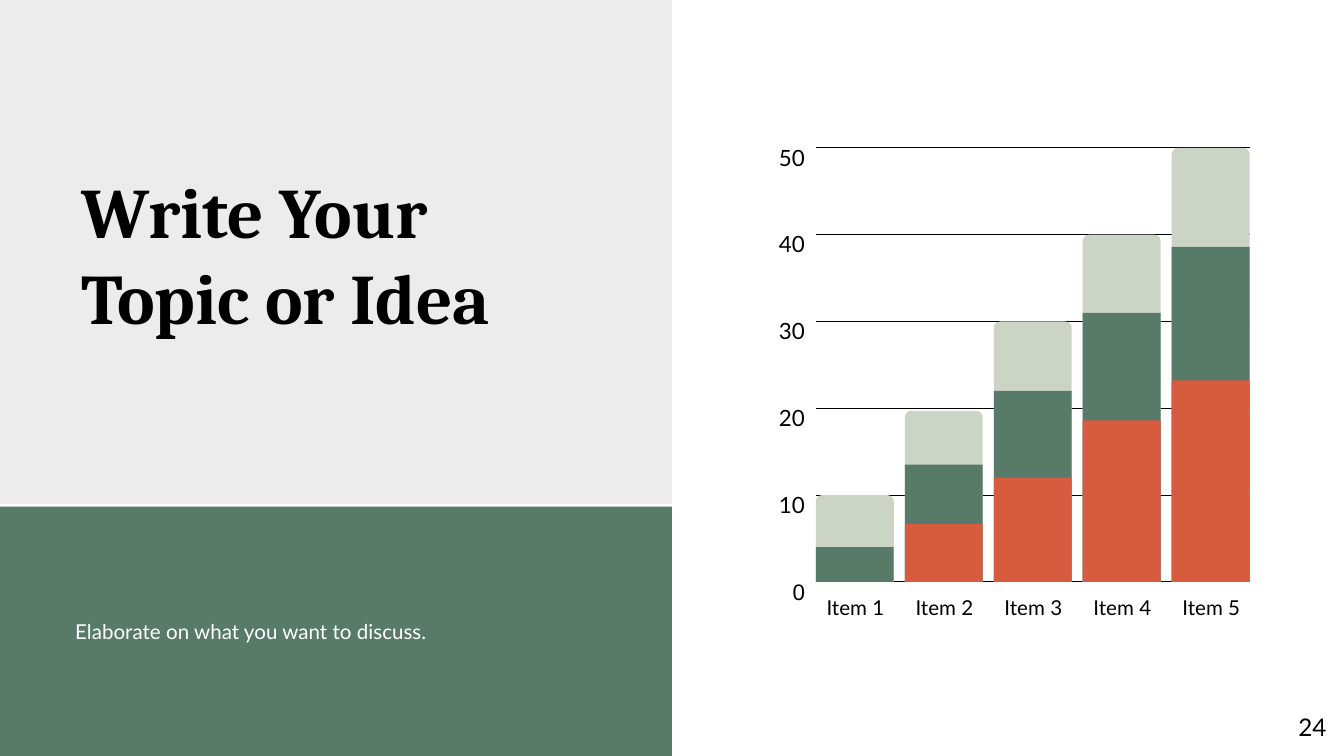
from lxml.etree import SubElement
from pptx import Presentation
from pptx.dml.color import RGBColor
from pptx.enum.shapes import MSO_CONNECTOR, MSO_SHAPE
from pptx.enum.text import MSO_ANCHOR, MSO_AUTO_SIZE, PP_ALIGN
from pptx.oxml.ns import qn
from pptx.util import Inches, Pt

BLACK = RGBColor(0x00, 0x00, 0x00)
WHITE = RGBColor(0xFF, 0xFF, 0xFF)
GREY = RGBColor(0xED, 0xEC, 0xED)
SAGE = RGBColor(0xCB, 0xD4, 0xC5)
GREEN = RGBColor(0x58, 0x7B, 0x69)
ORANGE = RGBColor(0xD7, 0x5B, 0x3F)

# Slide grid: square cells, 100 columns by 56.25 rows
COLUMNS, ROWS = 100, 56.25
CELL = Inches(10) / COLUMNS

# Chart geometry in grid cells
CHART_LEFT, CHART_RIGHT, BASELINE = 60.7, 93, 43.3
ROWS_PER_UNIT = 0.646
BAR_WIDTH, BAR_STEP = 5.8, 6.62

# Item: heights reached by the sage, green and orange parts
ITEMS = {
    "Item 1": (10, 4, 0),
    "Item 2": (19.7, 13.5, 6.7),
    "Item 3": (30, 22, 12),
    "Item 4": (40, 31, 18.6),
    "Item 5": (50, 38.6, 23.2),
}


def cells(*lengths):
    return [round(length * CELL) for length in lengths]


def write_text(shape, text, size=11, font="Lato", color=BLACK, bold=False,
               align=PP_ALIGN.LEFT, spacing=1.0, anchor=MSO_ANCHOR.TOP):
    frame = shape.text_frame
    frame.word_wrap = True
    frame.auto_size = MSO_AUTO_SIZE.NONE
    frame.vertical_anchor = anchor
    frame.margin_left = frame.margin_right = 0
    frame.margin_top = frame.margin_bottom = 0
    frame.text = text
    paragraph = frame.paragraphs[0]
    paragraph.alignment = align
    paragraph.line_spacing = spacing
    run_font = paragraph.runs[0].font
    run_font.name, run_font.size, run_font.bold = font, Pt(size), bold
    run_font.color.rgb = color


class TopicSlide:
    def __init__(self, presentation):
        self.slide = presentation.slides.add_slide(presentation.slide_layouts[5])
        self.shapes = self.slide.shapes

    def title(self, text, left, top, width, height, **style):
        title = self.shapes.title
        title.left, title.top, title.width, title.height = cells(left, top, width, height)
        write_text(title, text, **style)
        # Bring the title in front of the panels
        title.element.getparent().append(title.element)

    def text(self, text, left, top, width, height, **style):
        write_text(self.shapes.add_textbox(*cells(left, top, width, height)), text, **style)

    def block(self, left, top, width, height, color, kind=MSO_SHAPE.RECTANGLE):
        shape = self.shapes.add_shape(kind, *cells(left, top, width, height))
        shape.shadow.inherit = False
        shape.fill.solid()
        shape.fill.fore_color.rgb = color
        shape.line.fill.background()
        return shape

    def bar(self, left, value, color, rounded=False):
        kind = MSO_SHAPE.ROUND_2_SAME_RECTANGLE if rounded else MSO_SHAPE.RECTANGLE
        height = value * ROWS_PER_UNIT
        shape = self.block(left, BASELINE - height, BAR_WIDTH, height, color, kind)
        if rounded:
            shape.adjustments[0] = 0.08

    def gridline(self, row):
        line = self.shapes.add_connector(
            MSO_CONNECTOR.STRAIGHT, *cells(CHART_LEFT, row, CHART_RIGHT, row))
        line.line.color.rgb = BLACK
        line.line.width = Pt(0.5)
        SubElement(line.element.spPr, qn("a:effectLst"))

    def stacked_chart(self):
        # Value axis and gridlines
        for value in range(50, -1, -10):
            row = BASELINE - value * ROWS_PER_UNIT
            self.gridline(row)
            self.text(str(value), 57.6, row - 1.1, 2.3, 2, size=12,
                      font="Lato" if value else "Arial",
                      align=PP_ALIGN.RIGHT, spacing=1.4)
        # Bars and item names; each part overlaps the taller one behind it
        for index, (name, (sage, green, orange)) in enumerate(ITEMS.items()):
            left = CHART_LEFT + index * BAR_STEP
            self.bar(left, sage, SAGE, rounded=True)
            self.bar(left, green, GREEN)
            if orange:
                self.bar(left, orange, ORANGE)
            self.text(name, left + 0.4, 44, 5.1, 1.9,
                      align=PP_ALIGN.CENTER, spacing=1.15)


def main():
    presentation = Presentation()
    presentation.slide_width, presentation.slide_height = cells(COLUMNS, ROWS)
    page = TopicSlide(presentation)

    page.stacked_chart()

    # Left panels with title and description
    page.block(0, 37.7, COLUMNS / 2, ROWS - 37.7, GREEN)
    page.block(0, 0, COLUMNS / 2, 37.5, GREY)
    page.title("Write Your Topic or Idea", 6.1, 12.5, 35, 12.8,
               size=38, font="Cambria", bold=True)
    page.text("Elaborate on what you want to discuss.", 5.6, 45.8, 35.4, 1.9,
              color=WHITE, spacing=1.15)

    # Page number
    page.text("24", 92.7, 51.9, 6, 4.3, size=13,
              align=PP_ALIGN.RIGHT, anchor=MSO_ANCHOR.MIDDLE)

    presentation.save("out.pptx")


if __name__ == "__main__":
    main()
